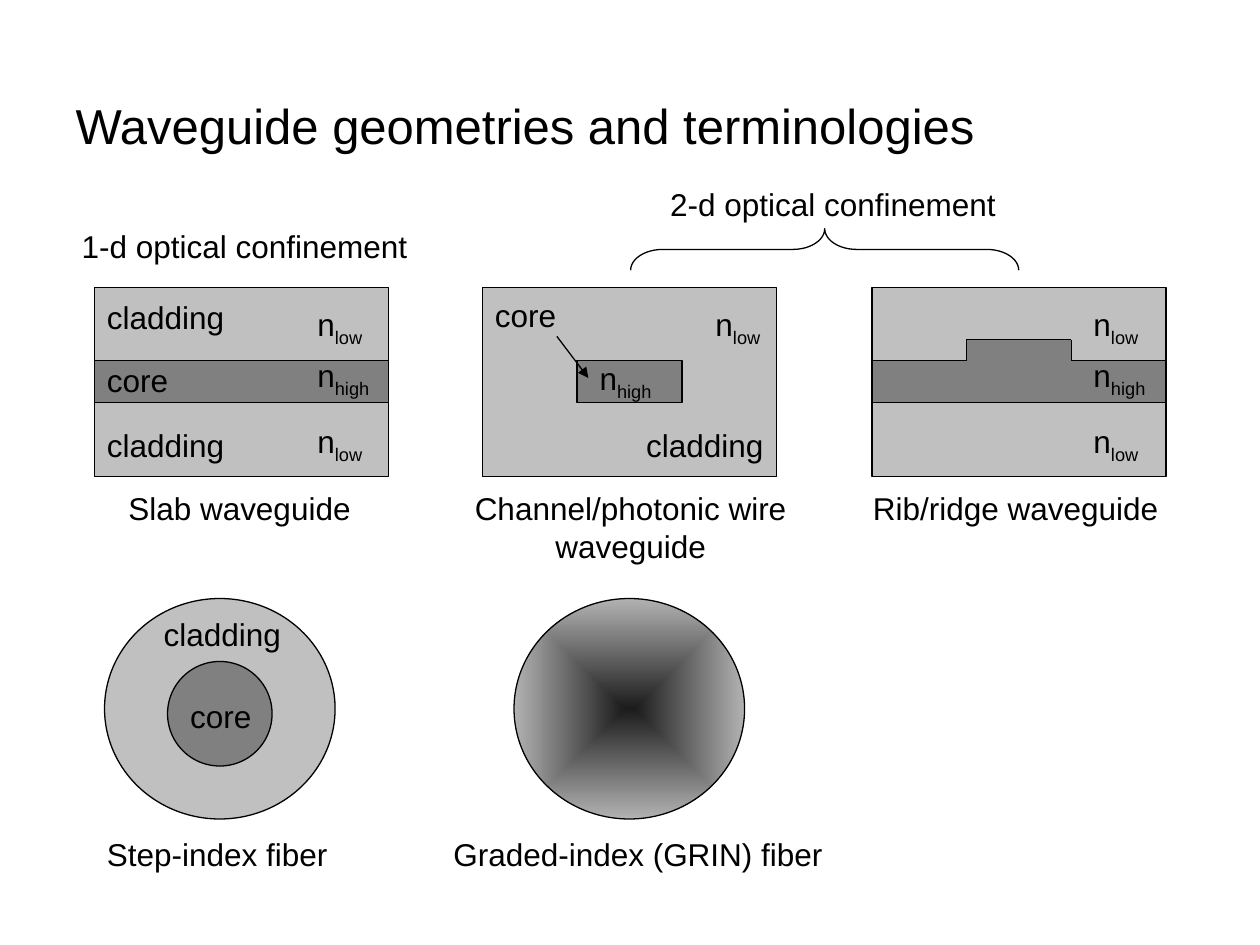
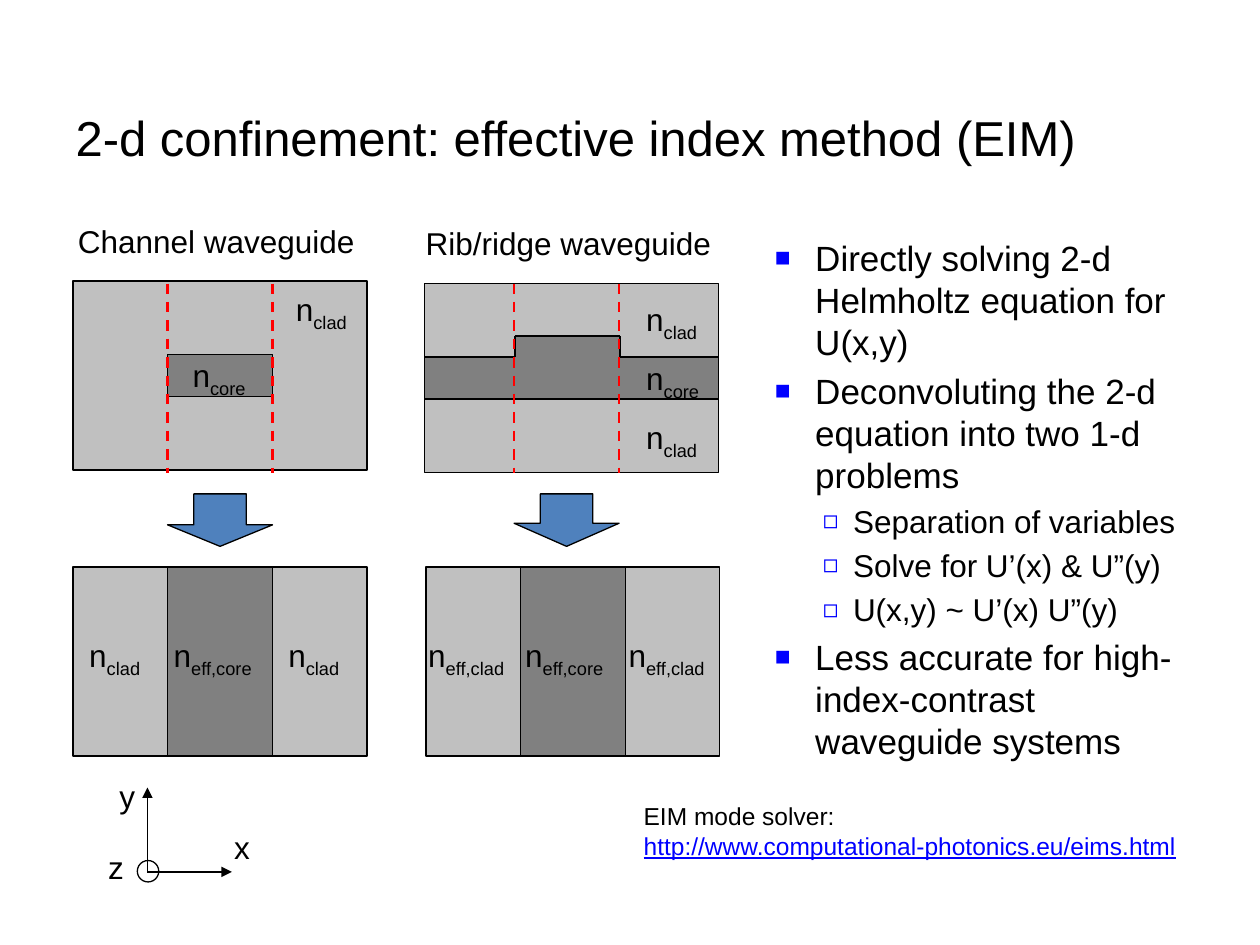
import pptx
import pptx.util
import pptx.dml.color
import pptx.enum.dml
import pptx.enum.shapes
import pptx.enum.text
import pptx.oxml
import pptx.oxml.ns

SHAPE = pptx.enum.shapes.MSO_SHAPE
ALIGN = pptx.enum.text.PP_ALIGN
AUTO = pptx.enum.text.MSO_AUTO_SIZE
ANCHOR = pptx.enum.text.MSO_ANCHOR
NS = pptx.oxml.ns.nsdecls("a")


class Theme:
    font = "Arial"
    ink, clad, core = "000000", "C0C0C0", "808080"
    blue, red, arrow = "0000FF", "FF0000", "4F81BD"
    fade = ("1C1C1C", "B2B2B2")
    title, body, label, small = 28, 20, 18, 14
    thin, thick = 0.75, 1.5


CELL = 1 / 12  # inches; a guide is 28 by 18 cells

# Parts of each guide: left, top, width, height in cells, then the fill
SLAB = [(0, 0, 28, 7, Theme.clad), (0, 7, 28, 4, Theme.core),
        (0, 11, 28, 7, Theme.clad)]
WIRE = [(0, 0, 28, 18, Theme.clad), (9, 7, 10, 4, Theme.core)]
SPLIT = [(0, 0, 28, 18, Theme.clad), (9, 0, 10, 18, Theme.core)]

# Widths of the labels; "n_low" stands for n with the subscript low
WIDTHS = {
    "n_low": 0.59, "n_high": 0.65, "n_core": 0.66, "n_clad": 0.64,
    "n_eff,core": 0.9, "n_eff,clad": 0.88, "core": 0.69, "cladding": 1.13,
    "x": 0.33, "y": 0.33, "z": 0.33,
    "Slab waveguide": 1.97, "Channel/photonic wire\nwaveguide": 2.73,
    "Rib/ridge waveguide": 2.47, "Channel waveguide": 2.4,
    "1-d optical confinement": 2.83, "2-d optical confinement": 2.83,
    "Step-index fiber": 1.95, "Graded-index (GRIN) fiber": 3.13,
}

# Guides: left, top, parts, ridge start in cells, labels set from its corner
KINDS = [
    (0.75, 2.28, SLAB, None,
     [("cladding", 0, 0.04), ("core", 0, 0.54), ("cladding", 0, 1.05),
      ("n_low", 1.67, 0.09), ("n_high", 1.67, 0.5), ("n_low", 1.67, 1.02)]),
    (3.83, 2.28, WIRE, None,
     [("core", 0, 0.02), ("n_high", 0.83, 0.52), ("n_low", 1.75, 0.09),
      ("cladding", 1.2, 1.05)]),
    (6.92, 2.28, SLAB, 9,
     [("n_low", 1.66, 0.09), ("n_high", 1.66, 0.5), ("n_low", 1.66, 1.02)]),
]
STEPS = [
    (0.58, 2.23, WIRE, None, [("n_core", 0.85, 0.55), ("n_clad", 1.67, 0.02)]),
    (3.37, 2.25, SLAB, 8.6,
     [("n_clad", 1.66, 0.08), ("n_core", 1.66, 0.55), ("n_clad", 1.66, 1.02)]),
    (0.58, 4.5, SPLIT, None,
     [("n_clad", 0.03, 0.5), ("n_eff,core", 0.7, 0.5), ("n_clad", 1.61, 0.5)]),
    (3.38, 4.5, SPLIT, None,
     [("n_eff,clad", -0.08, 0.5), ("n_eff,core", 0.69, 0.5),
      ("n_eff,clad", 1.51, 0.5)]),
]

NAMES = [
    ("1-d optical confinement", 0.55, 1.75),
    ("2-d optical confinement", 5.22, 1.42),
    ("Slab waveguide", 0.92, 3.83),
    ("Channel/photonic wire\nwaveguide", 3.64, 3.83),
    ("Rib/ridge waveguide", 6.83, 3.83),
    ("cladding", 1.2, 4.83), ("core", 1.41, 5.48),
    ("Step-index fiber", 0.75, 6.58),
    ("Graded-index (GRIN) fiber", 3.5, 6.58),
]
HEADS = [("Channel waveguide", 0.52, 1.71), ("Rib/ridge waveguide", 3.28, 1.73)]
AXES = [("y", 0.85, 6.12), ("x", 1.76, 6.52), ("z", 0.76, 6.68)]
CUTS = [(1.33, 0.41), (4.08, 0.44)]  # left edge, arrow head share
SOLVER = "EIM mode solver:\nhttp://www.computational-photonics.eu/eims.html"

POINTS = [
    (0, "Directly solving 2-d Helmholtz equation for U(x,y)"),
    (0, "Deconvoluting the 2-d equation into two 1-d problems"),
    (1, "Separation of variables"),
    (1, "Solve for U’(x) & U”(y)"),
    (1, "U(x,y) ~ U’(x) U”(y)"),
    (0, "Less accurate for high-index-contrast waveguide systems"),
]
# Per level: left margin, indent, mark, mark size in percent, type size
LEVELS = [(0.32, -0.32, "■", 75, Theme.body),
          (0.62, -0.24, "◻", 80, Theme.label)]


def inch(*sizes):
    return [pptx.util.Inches(size) for size in sizes]


def tint(text):
    return pptx.dml.color.RGBColor.from_string(text)


def style(run, size, color=Theme.ink):
    run.font.name = Theme.font
    run.font.size = pptx.util.Pt(size)
    run.font.color.rgb = tint(color)


def place(shape, *box):
    shape.left, shape.top, shape.width, shape.height = inch(*box)


def shape(slide, kind, box, fill=None, line=Theme.ink):
    item = slide.shapes.add_shape(kind, *inch(*box))
    item.shadow.inherit = False
    if fill:
        item.fill.solid()
        item.fill.fore_color.rgb = tint(fill)
    else:
        item.fill.background()
    if line:
        item.line.color.rgb = tint(line)
        item.line.width = pptx.util.Pt(Theme.thin)
    else:
        item.line.fill.background()
    return item


def line(slide, start, end, color=Theme.ink, width=Theme.thin,
         dash=False, head=False):
    item = slide.shapes.add_connector(
        pptx.enum.shapes.MSO_CONNECTOR.STRAIGHT, *inch(*start, *end))
    item.line.color.rgb = tint(color)
    item.line.width = pptx.util.Pt(width)
    if dash:
        item.line.dash_style = pptx.enum.dml.MSO_LINE.DASH
    if head:
        item.line._get_or_add_ln().append(
            pptx.oxml.parse_xml(f'<a:tailEnd {NS} type="triangle"/>'))
    item._element.spPr.append(pptx.oxml.parse_xml(f"<a:effectLst {NS}/>"))


def label(slide, text, left, top, size=Theme.label, width=None):
    """Add unwrapped text; what follows "_" becomes a subscript."""
    rows = text.split("\n")
    width = width or WIDTHS[text]
    box = slide.shapes.add_textbox(
        *inch(left, top, width, 0.1 + len(rows) * size / 60))
    frame = box.text_frame
    frame.word_wrap = False
    frame.auto_size = AUTO.SHAPE_TO_FIT_TEXT
    for i, row in enumerate(rows):
        para = frame.add_paragraph() if i else frame.paragraphs[0]
        main, _, sub = row.partition("_")
        para.text = main
        if sub:
            para.add_run().text = sub
            para.runs[1]._r.get_or_add_rPr().set("baseline", "-25000")
        for run in para.runs:
            style(run, size)
    return frame


def guide(slide, left, top, parts, ridge, notes):
    for x, y, wide, high, fill in parts:
        box = (left + x * CELL, top + y * CELL, wide * CELL, high * CELL)
        shape(slide, SHAPE.RECTANGLE, box, fill)
    if ridge is not None:
        x, end = left + ridge * CELL, left + (ridge + 10) * CELL
        y, base = top + 5 * CELL, top + 7 * CELL
        shape(slide, SHAPE.RECTANGLE, (x, y, end - x, 4 * CELL),
              Theme.core, None)
        path = [(x, base), (x, y), (end, y), (end, base)]
        for a, b in zip(path, path[1:]):
            line(slide, a, b)
    for text, x, y in notes:
        label(slide, text, left + x, top + y)


def start(deck, layout, text, top, high):
    slide = deck.slides.add_slide(deck.slide_layouts[layout])
    title = slide.shapes.title
    place(title, 0.5, top, 9, high)
    frame = title.text_frame
    frame.text = text
    frame.vertical_anchor = ANCHOR.MIDDLE
    frame.paragraphs[0].alignment = ALIGN.LEFT
    style(frame.paragraphs[0].runs[0], Theme.title)
    return slide


def fade(item):
    """Fill a shape from a dark centre to a light rim."""
    spot = "".join(f'<a:gs pos="{i * 100000}"><a:srgbClr val="{color}"/></a:gs>'
                   for i, color in enumerate(Theme.fade))
    fill = pptx.oxml.parse_xml(
        f'<a:gradFill {NS} rotWithShape="1"><a:gsLst>{spot}</a:gsLst>'
        '<a:path path="shape"><a:fillToRect l="50000" t="50000" r="50000" '
        'b="50000"/></a:path></a:gradFill>')
    props = item._element.spPr
    props.replace(props.find(pptx.oxml.ns.qn("a:noFill")), fill)


def bullets(body):
    place(body, 6.05, 1.83, 3.5, 4.42)
    frame = body.text_frame
    frame.auto_size = AUTO.NONE
    for i, (level, text) in enumerate(POINTS):
        para = frame.add_paragraph() if i else frame.paragraphs[0]
        para.text = text
        para.level = level
        left, indent, mark, share, size = LEVELS[level]
        props = para._p.get_or_add_pPr()
        props.set("marL", str(pptx.util.Inches(left)))
        props.set("indent", str(pptx.util.Inches(indent)))
        for xml in (f'<a:buClr {NS}><a:srgbClr val="{Theme.blue}"/></a:buClr>',
                    f'<a:buSzPct {NS} val="{share * 1000}"/>',
                    f'<a:buFont {NS} typeface="{Theme.font}"/>',
                    f'<a:buChar {NS} char="{mark}"/>'):
            props.append(pptx.oxml.parse_xml(xml))
        if i == 0:
            para.space_before = pptx.util.Pt(0)
        style(para.runs[0], size)


def forms(deck):
    slide = start(deck, 5, "Waveguide geometries and terminologies", 0.53, 0.92)
    for item in KINDS:
        guide(slide, *item)
    line(slide, (4.42, 2.67), (4.67, 3), head=True)
    brace = shape(slide, SHAPE.LEFT_BRACE, (6.38, 0.44, 0.33, 3.08))
    brace.rotation = 90
    brace.adjustments[0], brace.adjustments[1] = 0.77, 0.5
    shape(slide, SHAPE.OVAL, (0.83, 4.75, 1.83, 1.75), Theme.clad)
    shape(slide, SHAPE.OVAL, (1.33, 5.25, 0.83, 0.83), Theme.core)
    fade(shape(slide, SHAPE.OVAL, (4.08, 4.75, 1.83, 1.75)))
    for name in NAMES:
        frame = label(slide, *name)
        if len(frame.paragraphs) > 1:
            for para in frame.paragraphs:
                para.alignment = ALIGN.CENTER


def method(deck):
    slide = start(deck, 1, "2-d confinement: effective index method (EIM)",
                  0.55, 1.08)
    bullets(slide.placeholders[1])
    for item in STEPS:
        guide(slide, *item)
    for left, head in CUTS:
        for x in (left, left + 10 * CELL):
            line(slide, (x, 2.25), (x, 3.75), Theme.red, Theme.thick, dash=True)
        arrow = shape(slide, SHAPE.DOWN_ARROW,
                      (left, 3.92, 10 * CELL, 5 * CELL), Theme.arrow)
        arrow.adjustments[0], arrow.adjustments[1] = 0.5, head
    for end in ((1.17, 6.25), (1.84, 6.92)):
        line(slide, (1.17, 6.92), end, head=True)
    shape(slide, SHAPE.OVAL, (1.09, 6.83, 0.17, 0.17))
    for name in HEADS + AXES:
        label(slide, *name)
    link = label(slide, SOLVER, 5.01, 6.31, Theme.small, 4.45)
    run = link.paragraphs[1].runs[0]
    style(run, Theme.small, Theme.blue)
    run.font.underline = True


def main():
    deck = pptx.Presentation()
    deck.slide_width, deck.slide_height = inch(10, 7.5)
    forms(deck)
    method(deck)
    deck.save("out.pptx")


if __name__ == "__main__":
    main()
